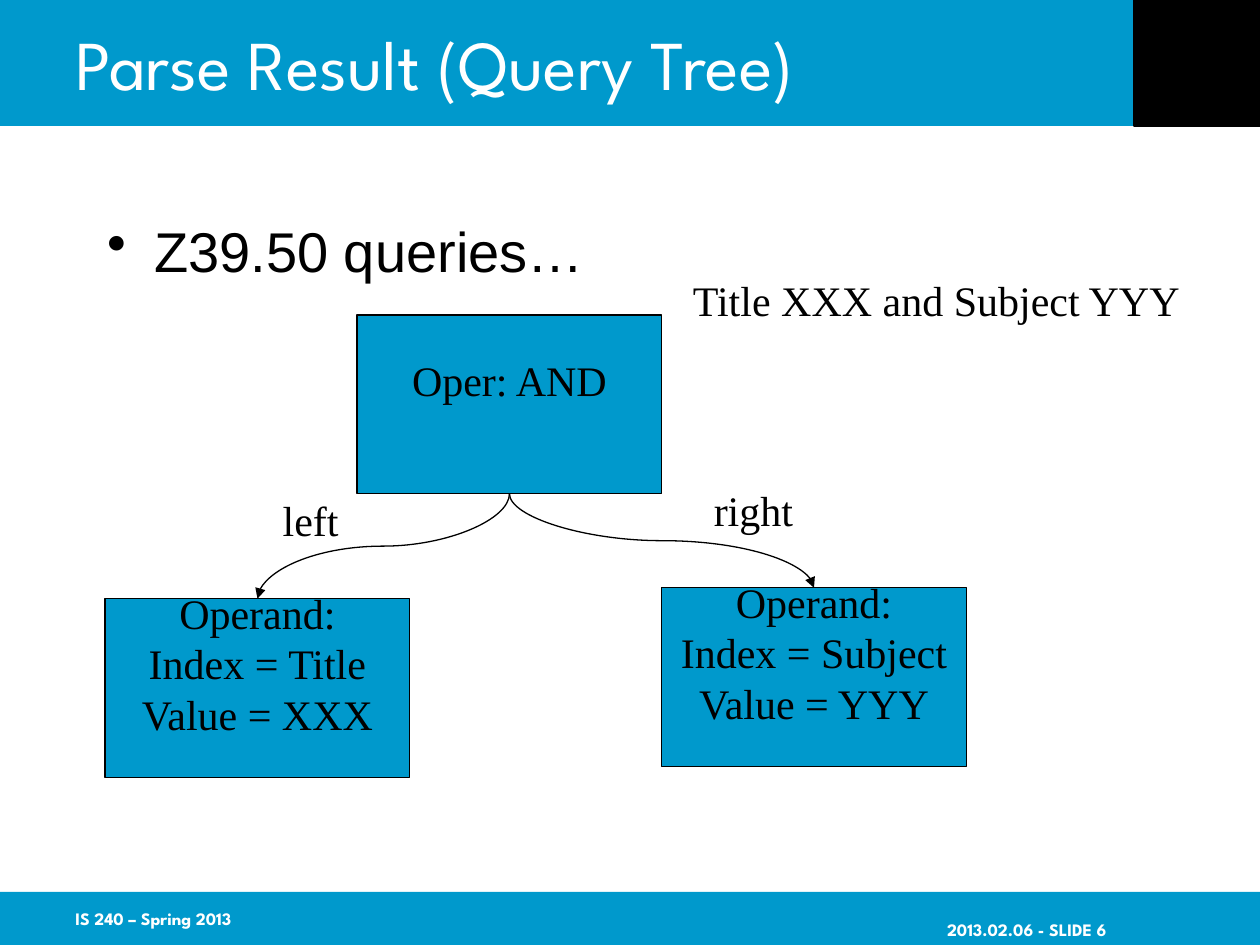
from lxml.etree import SubElement
from pptx import Presentation
from pptx.dml.color import RGBColor
from pptx.enum.shapes import MSO_CONNECTOR, MSO_SHAPE
from pptx.enum.text import MSO_ANCHOR, PP_ALIGN
from pptx.oxml.ns import qn
from pptx.util import Cm, Pt

BLUE, BLACK, WHITE = "0099CC", "000000", "FFFFFF"
TITLE_FONT, TREE_FONT = "League Spartan", "Times New Roman"
SLIDE_WIDTH, SLIDE_HEIGHT = 25.4, 19.05
NODE_WIDTH, NODE_HEIGHT = 6.14, 3.6
INSETS = (0.25, 0.13, 0.25, 0.13)

BANDS = [
    ((0, 0, SLIDE_WIDTH, 2.54), BLUE, None),
    ((0, 17.98, SLIDE_WIDTH, 1.07), BLUE, None),
    ((22.86, 0, 2.54, 2.54), BLACK, BLACK),
]
FOOTER = {"size": 10, "name": TITLE_FONT, "color": WHITE, "bold": True}
TITLE = {"size": 40, "name": TITLE_FONT, "color": WHITE}
BODY = {"size": 32, "name": "Arial", "color": BLACK}
TREE = {"size": 24, "name": TREE_FONT, "color": BLACK}

TEXTS = [
    ("2013.02.06 - SLIDE 6", (17.02, 17.98, 5.28, 1.07), FOOTER,
     {"align": PP_ALIGN.RIGHT, "anchor": MSO_ANCHOR.MIDDLE, "insets": (0.25, 0.56, 0, 0.13)}),
    ("IS 240 – Spring 2013", (1.27, 17.98, 5.28, 1.07), FOOTER,
     {"anchor": MSO_ANCHOR.MIDDLE, "insets": (0.25, 0.13, 0, 0.13)}),
    ("Parse Result (Query Tree)", (1.27, 0, 21.59, 2.54), TITLE,
     {"anchor": MSO_ANCHOR.MIDDLE}),
    ("Z39.50 queries…", (1.91, 4.23, 21.39, 1.9), BODY,
     {"bullet": "•", "insets": (0.25, 0.13, 0.25, 0)}),
    ("Title XXX and Subject YYY", (13.72, 5.4, 10.39, 1.27), TREE, {"wrap": False}),
    ("left", (5.45, 9.84, 1.65, 1.27), TREE, {"wrap": False}),
    ("right", (14.14, 9.64, 2.11, 1.27), TREE, {"wrap": False}),
]
NODES = {
    "root": ((7.2, 6.35), ["Oper: AND"]),
    "left": ((2.12, 12.07), ["Operand:", "Index = Title", "Value = XXX"]),
    "right": ((13.34, 11.85), ["Operand:", "Index = Subject", "Value = YYY"]),
}
BRANCHES = [("root", "left"), ("root", "right")]


def rgb(color):
    return RGBColor.from_string(color)


def write(shape, lines, style, align=PP_ALIGN.LEFT, anchor=MSO_ANCHOR.TOP,
          insets=INSETS, wrap=True, bullet=None):
    frame = shape.text_frame
    frame.word_wrap = wrap
    frame.vertical_anchor = anchor
    for side, inset in zip(("left", "top", "right", "bottom"), insets):
        setattr(frame, f"margin_{side}", Cm(inset))
    for index, line in enumerate(lines):
        para = frame.paragraphs[0] if index == 0 else frame.add_paragraph()
        para.alignment = align
        if bullet:
            properties = para._p.get_or_add_pPr()
            properties.set("marL", str(Cm(0.95)))
            properties.set("indent", str(Cm(-0.95)))
            SubElement(properties, qn("a:buChar")).set("char", bullet)
        span = para.add_run()
        span.text = line
        formats = {"size": Pt(style["size"]), "name": style["name"],
                   "bold": style.get("bold", False)}
        for key, value in formats.items():
            setattr(span.font, key, value)
        span.font.color.rgb = rgb(style["color"])


def add_rectangle(page, place, fill, line):
    box = page.shapes.add_shape(MSO_SHAPE.RECTANGLE, *map(Cm, place))
    box.shadow.inherit = False
    box.fill.solid()
    box.fill.fore_color.rgb = rgb(fill)
    if line:
        box.line.color.rgb = rgb(line)
        box.line.width = Pt(0.75)
    else:
        box.line.fill.background()
    return box


def add_branch(page, parent, child):
    start_x, start_y = parent[0] + NODE_WIDTH / 2, parent[1] + NODE_HEIGHT
    end_x, end_y = child[0] + NODE_WIDTH / 2, child[1]
    center_x, center_y = (start_x + end_x) / 2, (start_y + end_y) / 2
    turn = 1 if end_x < start_x else -1
    half_drop = turn * (end_y - start_y) / 2
    half_span = abs(end_x - start_x) / 2
    corners = (center_x - half_drop, center_y - half_span,
               center_x + half_drop, center_y + half_span)
    branch = page.shapes.add_connector(MSO_CONNECTOR.CURVE, *map(Cm, corners))
    branch.line.color.rgb = rgb(BLACK)
    branch.line.width = Pt(0.75)
    properties = branch._element.spPr
    properties.find(qn("a:xfrm")).set("rot", str(turn * 90 % 360 * 60000))
    SubElement(properties.find(qn("a:ln")), qn("a:tailEnd")).set("type", "triangle")
    SubElement(properties, qn("a:effectLst"))


def main():
    deck = Presentation()
    deck.slide_width, deck.slide_height = Cm(SLIDE_WIDTH), Cm(SLIDE_HEIGHT)
    page = deck.slides.add_slide(deck.slide_layouts[6])
    for place, fill, line in BANDS:
        add_rectangle(page, place, fill, line)
    for corner, lines in NODES.values():
        node = add_rectangle(page, (*corner, NODE_WIDTH, NODE_HEIGHT), BLUE, BLACK)
        write(node, lines, TREE, align=PP_ALIGN.CENTER, anchor=MSO_ANCHOR.MIDDLE,
              insets=(0.25, 0.13, 0.25, 1.14), wrap=False)
    for parent, child in BRANCHES:
        add_branch(page, NODES[parent][0], NODES[child][0])
    for text, place, style, layout in TEXTS:
        box = page.shapes.add_textbox(*map(Cm, place))
        write(box, [text], style, **layout)
    deck.save("out.pptx")


if __name__ == "__main__":
    main()
